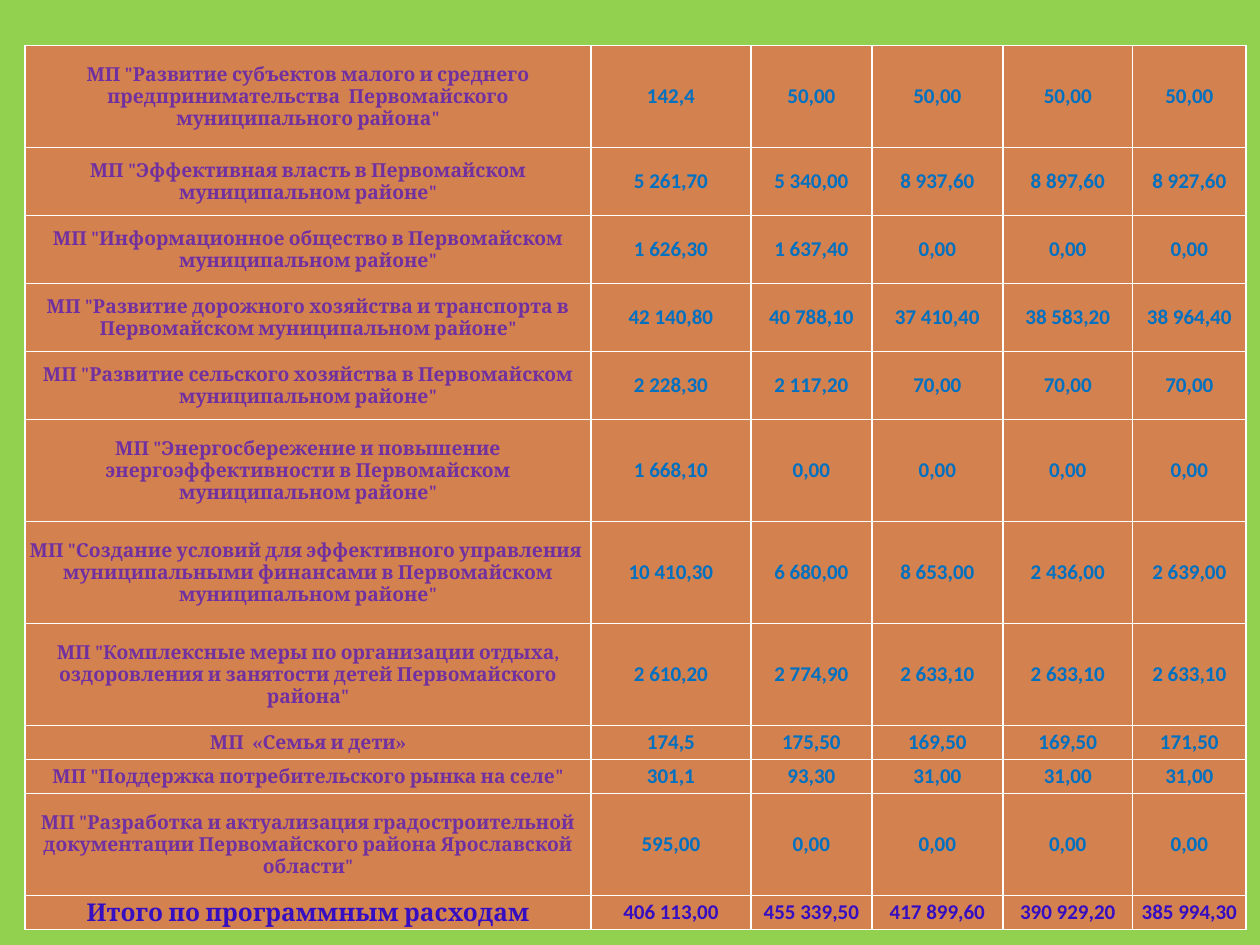
from lxml.etree import SubElement
from pptx import Presentation
from pptx.dml.color import RGBColor
from pptx.enum.text import MSO_ANCHOR, PP_ALIGN
from pptx.oxml.ns import qn
from pptx.util import Inches, Pt

GREEN = RGBColor(0x92, 0xD0, 0x50)
CORAL = RGBColor(0xFF, 0x50, 0x50)
WHITE = RGBColor(0xFF, 0xFF, 0xFF)
PURPLE = RGBColor(0x70, 0x30, 0xA0)
BLUE = RGBColor(0x00, 0x70, 0xC0)
INDIGO = RGBColor(0x35, 0x0E, 0xC2)

FILL_OPACITY = 61000  # thousandths of a percent
LINE_HEIGHT = 0.27
COLUMN_WIDTHS = [4.49, 1.27, 0.96, 1.04, 1.03, 0.9]

# Row height in lines, programme name, amounts
PROGRAMMES = [
    (3, 'МП "Развитие субъектов малого и среднего предпринимательства  Первомайского муниципального района"',
     ["142,4", "50,00", "50,00", "50,00", "50,00"]),
    (2, 'МП "Эффективная власть в Первомайском муниципальном районе"',
     ["5 261,70", "5 340,00", "8 937,60", "8 897,60", "8 927,60"]),
    (2, 'МП "Информационное общество в Первомайском муниципальном районе"',
     ["1 626,30", "1 637,40", "0,00", "0,00", "0,00"]),
    (2, 'МП "Развитие дорожного хозяйства и транспорта в Первомайском муниципальном районе"',
     ["42 140,80", "40 788,10", "37 410,40", "38 583,20", "38 964,40"]),
    (2, 'МП "Развитие сельского хозяйства в Первомайском муниципальном районе"',
     ["2 228,30", "2 117,20", "70,00", "70,00", "70,00"]),
    (3, 'МП "Энергосбережение и повышение энергоэффективности в Первомайском муниципальном районе"',
     ["1 668,10", "0,00", "0,00", "0,00", "0,00"]),
    (3, 'МП "Создание условий для эффективного управления  муниципальными финансами в Первомайском '
        'муниципальном районе"',
     ["10 410,30", "6 680,00", "8 653,00", "2 436,00", "2 639,00"]),
    (3, 'МП "Комплексные меры по организации отдыха, оздоровления и занятости детей Первомайского района"',
     ["2 610,20", "2 774,90", "2 633,10", "2 633,10", "2 633,10"]),
    (1, "МП  «Семья и дети»", ["174,5", "175,50", "169,50", "169,50", "171,50"]),
    (1, 'МП "Поддержка потребительского рынка на селе"',
     ["301,1", "93,30", "31,00", "31,00", "31,00"]),
    (3, 'МП "Разработка и актуализация градостроительной документации Первомайского района Ярославской области"',
     ["595,00", "0,00", "0,00", "0,00", "0,00"]),
    (1, "Итого по программным расходам",
     ["406 113,00", "455 339,50", "417 899,60", "390 929,20", "385 994,30"]),
]

NAME_FONT = {"name": "Cambria", "size": Pt(11), "bold": True}
AMOUNT_FONT = {"name": "Calibri", "size": Pt(12), "bold": True}
TOTAL_NAME_FONT = {**NAME_FONT, "size": Pt(14)}
NAME_MARGINS = {"margin_left": Inches(0.01), "margin_top": Inches(0.01),
                "margin_right": Inches(0.01), "margin_bottom": 0}
AMOUNT_MARGINS = dict.fromkeys(NAME_MARGINS, 0)


def paint_cell(cell):
    """Give the cell white borders and a translucent fill, in the order the schema asks for."""
    properties = cell._tc.get_or_add_tcPr()
    for side in ("a:lnL", "a:lnR", "a:lnT", "a:lnB"):
        line = SubElement(properties, qn(side), w=str(Pt(1)))
        line_fill = SubElement(line, qn("a:solidFill"))
        SubElement(line_fill, qn("a:srgbClr"), val=str(WHITE))
    cell.fill.solid()
    cell.fill.fore_color.rgb = CORAL
    color = properties.find(qn("a:solidFill")).find(qn("a:srgbClr"))
    SubElement(color, qn("a:alpha"), val=str(FILL_OPACITY))


def write_cell(cell, text, font_format, color, margins):
    for attribute, value in margins.items():
        setattr(cell, attribute, value)
    cell.vertical_anchor = MSO_ANCHOR.MIDDLE
    paragraph = cell.text_frame.paragraphs[0]
    paragraph.alignment = PP_ALIGN.CENTER
    run = paragraph.add_run()
    run.text = text
    for attribute, value in font_format.items():
        setattr(run.font, attribute, value)
    run.font.color.rgb = color


presentation = Presentation()
presentation.slide_width = Inches(10)
presentation.slide_height = Inches(7.5)
slide = presentation.slides.add_slide(presentation.slide_layouts[6])
slide.background.fill.solid()
slide.background.fill.fore_color.rgb = GREEN

total_lines = sum(lines for lines, _, _ in PROGRAMMES)
table = slide.shapes.add_table(
    len(PROGRAMMES), len(COLUMN_WIDTHS), Inches(0.2), Inches(0.36),
    Inches(sum(COLUMN_WIDTHS)), Inches(total_lines * LINE_HEIGHT)).table
table.first_row = False
table.horz_banding = False
for column, width in zip(table.columns, COLUMN_WIDTHS):
    column.width = Inches(width)

for row, (lines, name, amounts) in zip(table.rows, PROGRAMMES):
    row.height = Inches(lines * LINE_HEIGHT)
    is_total = name.startswith("Итого")
    name_cell, *amount_cells = row.cells
    write_cell(name_cell, name, TOTAL_NAME_FONT if is_total else NAME_FONT,
               INDIGO if is_total else PURPLE, NAME_MARGINS)
    for cell, amount in zip(amount_cells, amounts):
        write_cell(cell, amount, AMOUNT_FONT, INDIGO if is_total else BLUE, AMOUNT_MARGINS)
    for cell in row.cells:
        paint_cell(cell)

presentation.save("out.pptx")
